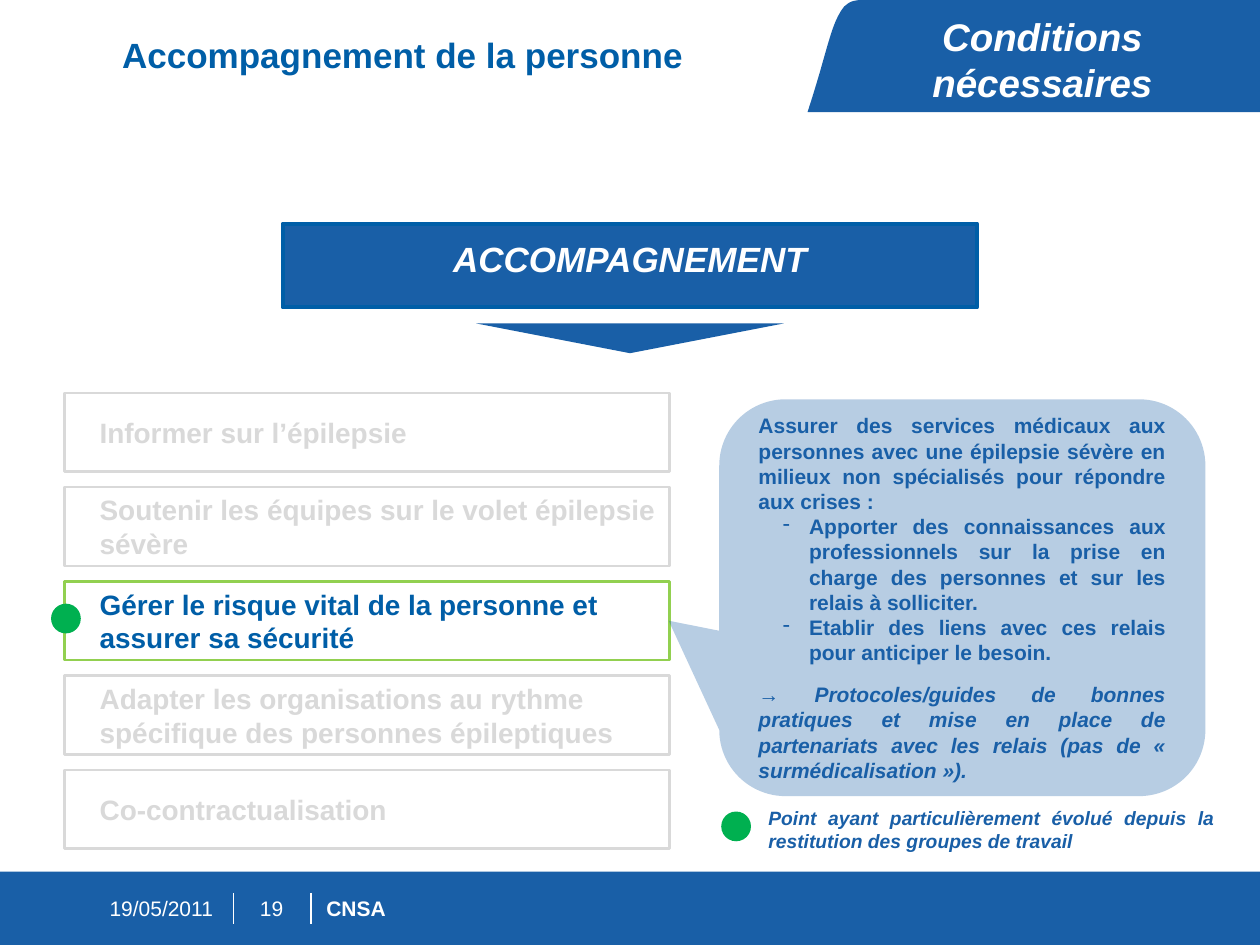
from pptx import Presentation
from pptx.dml.color import RGBColor
from pptx.enum.shapes import MSO_CONNECTOR, MSO_SHAPE
from pptx.enum.text import MSO_ANCHOR, PP_ALIGN
from pptx.oxml.ns import qn
from pptx.util import Cm, Pt
from lxml.etree import SubElement

BLUE = RGBColor(0x19, 0x5F, 0xA7)
DEEP_BLUE = RGBColor(0x00, 0x5E, 0xA7)
LIME = RGBColor(0x92, 0xD0, 0x50)
GREEN = RGBColor(0x00, 0xB0, 0x50)
GREY = RGBColor(0xD9, 0xD9, 0xD9)
WHITE = RGBColor(0xFF, 0xFF, 0xFF)

OPTIONS = [
    "Informer sur l’épilepsie",
    "Soutenir les équipes sur le volet épilepsie sévère",
    "Gérer le risque vital de la personne et assurer sa sécurité",
    "Adapter les organisations au rythme spécifique des personnes épileptiques",
    "Co-contractualisation",
]
CURRENT_OPTION = 2
OPTION_TOP, OPTION_PITCH = 7.92, 1.9


def write(para, text, size=12, color=BLUE, bold=True, italic=False, align=PP_ALIGN.LEFT,
          margin=0, indent=0, bullet=None, before=0, spacing=None):
    properties = para._p.get_or_add_pPr()
    properties.set("marL", str(Cm(margin)))
    properties.set("indent", str(Cm(indent)))
    if bullet:
        SubElement(properties, qn("a:buChar")).set("char", bullet)
    else:
        SubElement(properties, qn("a:buNone"))
    para.alignment = align
    para.space_before = Pt(before)
    if spacing:
        para.line_spacing = spacing
    span = para.add_run()
    span.text = text
    span.font.name = "Arial"
    span.font.size = Pt(size)
    span.font.bold = bold
    span.font.italic = italic
    span.font.color.rgb = color


def bezier(start, first, second, end, steps=12):
    """Return points along a cubic curve, without its start."""
    points = []
    for step in range(1, steps + 1):
        t = step / steps
        weights = ((1 - t) ** 3, 3 * t * (1 - t) ** 2, 3 * t * t * (1 - t), t ** 3)
        points.append(tuple(sum(w * p[axis] for w, p in zip(weights, (start, first, second, end)))
                            for axis in (0, 1)))
    return points


class SlideBuilder:
    def __init__(self, page):
        self.page = page

    def frame(self, box, insets, anchor):
        frame = box.text_frame
        frame.word_wrap = True
        frame.vertical_anchor = anchor
        (frame.margin_left, frame.margin_top,
         frame.margin_right, frame.margin_bottom) = map(Cm, insets)
        return frame

    def paint(self, shape, fill, line=None, width=1.5):
        shape.shadow.inherit = False
        shape.fill.solid()
        shape.fill.fore_color.rgb = fill
        if line is None:
            shape.line.fill.background()
        else:
            shape.line.color.rgb = line
            shape.line.width = Pt(width)

    def title(self, text, place, **style):
        box = self.page.shapes.title
        box.left, box.top, box.width, box.height = map(Cm, place)
        frame = self.frame(box, (0.25, 0.13, 0.25, 0.13), MSO_ANCHOR.MIDDLE)
        write(frame.paragraphs[0], text, **style)

    def text(self, text, place, insets=(0, 0, 0, 0), anchor=MSO_ANCHOR.MIDDLE, **style):
        box = self.page.shapes.add_textbox(*map(Cm, place))
        write(self.frame(box, insets, anchor).paragraphs[0], text, **style)

    def shape(self, kind, place, fill, line=None, width=1.5):
        shape = self.page.shapes.add_shape(kind, *map(Cm, place))
        self.paint(shape, fill, line, width)
        return shape

    def banner(self, text, place, insets, fill, line, width, **style):
        box = self.shape(MSO_SHAPE.RECTANGLE, place, fill, line, width)
        write(self.frame(box, insets, MSO_ANCHOR.MIDDLE).paragraphs[0], text, **style)

    def outline(self, points, fill):
        builder = self.page.shapes.build_freeform(*map(Cm, points[0]))
        builder.add_line_segments([(Cm(x), Cm(y)) for x, y in points[1:]])
        self.paint(builder.convert_to_shape(), fill)

    def divider(self, x, top, bottom):
        line = self.page.shapes.add_connector(
            MSO_CONNECTOR.STRAIGHT, Cm(x), Cm(top), Cm(x), Cm(bottom))
        line.line.color.rgb = WHITE
        line.line.width = Pt(0.75)
        SubElement(line._element.spPr, qn("a:effectLst"))

    def dot(self, x, y):
        self.shape(MSO_SHAPE.OVAL, (x, y, 0.6, 0.6), GREEN)

    def callout(self, place, adjustments, opacity, paragraphs):
        box = self.shape(MSO_SHAPE.ROUNDED_RECTANGULAR_CALLOUT, place, BLUE)
        for index, value in enumerate(adjustments):
            box.adjustments[index] = value
        color = box._element.spPr.find(qn("a:solidFill"))[0]
        SubElement(color, qn("a:alpha")).set("val", str(opacity * 1000))
        frame = self.frame(box, (0.4, 0.4, 0.4, 0.4), MSO_ANCHOR.MIDDLE)
        for index, (text, style) in enumerate(paragraphs):
            para = frame.add_paragraph() if index else frame.paragraphs[0]
            write(para, text, align=PP_ALIGN.JUSTIFY, **style)


def main():
    deck = Presentation()
    deck.slide_width, deck.slide_height = Cm(25.4), Cm(19.05)
    page = deck.slides.add_slide(deck.slide_layouts[5])
    builder = SlideBuilder(page)

    shoulder, crest, foot = (17.42, 0), (17.02, 0.13), (16.28, 2.26)
    builder.outline([(25.4, 0), shoulder,
                     *bezier(shoulder, (17.12, 0), (17.1, 0.08), crest),
                     *bezier(crest, (16.74, 0.48), (16.69, 1.02), foot),
                     (25.4, 2.26)], BLUE)
    builder.title("Accompagnement de la personne", (2.21, 0.64, 13.79, 0.99),
                  size=20, color=DEEP_BLUE, spacing=0.95)
    builder.text("Conditions nécessaires", (17.32, 0.13, 7.39, 0.99),
                 insets=(0.25, 0.13, 0.25, 0.13), anchor=MSO_ANCHOR.TOP,
                 size=22, color=WHITE, italic=True, align=PP_ALIGN.CENTER)

    builder.shape(MSO_SHAPE.RECTANGLE, (0, 17.57, 25.4, 1.48), BLUE)
    for x in (4.7, 6.27):
        builder.divider(x, 18, 18.62)
    builder.text("19/05/2011", (2.21, 17.96, 2.21, 0.69), color=WHITE, bold=False)
    builder.text("19", (4.98, 17.96, 0.99, 0.69), color=WHITE, bold=False,
                 align=PP_ALIGN.CENTER)
    builder.text("CNSA", (6.58, 17.96, 11.13, 0.69), color=WHITE)

    builder.banner("ACCOMPAGNEMENT", (5.7, 4.51, 14, 1.69), (0.4, 0.4, 0.4, 0.4),
                   BLUE, DEEP_BLUE, 2.25, size=20, color=WHITE, italic=True,
                   align=PP_ALIGN.CENTER, spacing=Pt(16))
    arrow = builder.shape(MSO_SHAPE.ISOSCELES_TRIANGLE, (9.6, 6.52, 6.2, 0.6), BLUE)
    arrow.rotation = 180

    for index, option in enumerate(OPTIONS):
        current = index == CURRENT_OPTION
        builder.banner(option, (1.3, OPTION_TOP + index * OPTION_PITCH, 12.2, 1.59),
                       (0.2, 0, 0.1, 0), WHITE, LIME if current else GREY, 1.5,
                       size=16, color=DEEP_BLUE if current else GREY, margin=0.51)

    hyphen = {"margin": 1.02, "indent": -0.53, "bullet": "-"}
    builder.callout((14.5, 8.05, 9.8, 8), (-0.604, 0.058, 0.167), 31, [
        ("Assurer des services médicaux aux personnes avec une épilepsie sévère en milieux "
         "non spécialisés pour répondre aux crises :", {}),
        ("Apporter des connaissances aux professionnels sur la prise en charge des personnes "
         "et sur les relais à solliciter.", hyphen),
        ("Etablir des liens avec ces relais pour anticiper le besoin.", hyphen),
        ("→ Protocoles/guides de bonnes pratiques et mise en place de partenariats avec les "
         "relais (pas de « surmédicalisation »).", {"italic": True, "before": 9.6}),
    ])

    builder.dot(1.03, 12.17)
    builder.dot(14.54, 16.36)
    builder.text("Point ayant particulièrement évolué depuis la restitution des groupes de travail",
                 (15.09, 16.13, 9.8, 1.19), insets=(0.4, 0.4, 0.4, 0.4),
                 size=11, italic=True, align=PP_ALIGN.JUSTIFY)
    deck.save("out.pptx")


if __name__ == "__main__":
    main()
